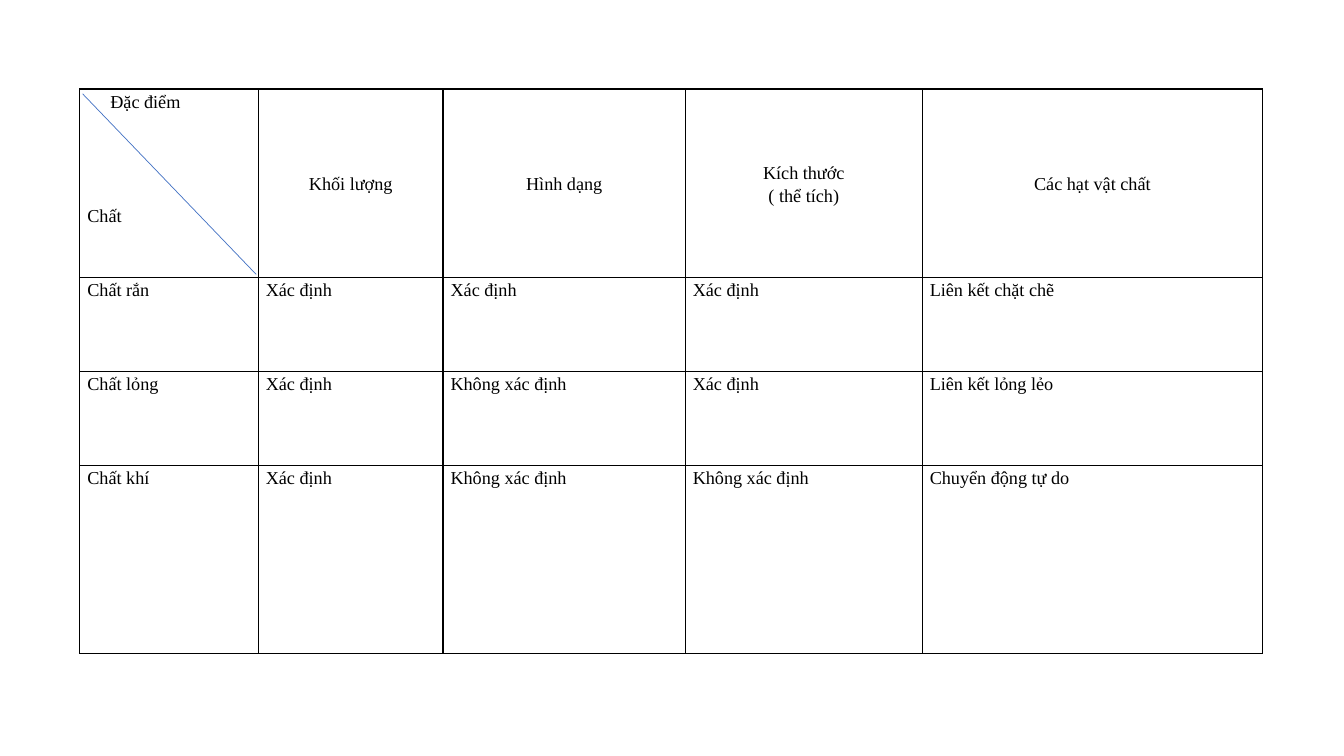
from lxml.etree import SubElement
from pptx import Presentation
from pptx.dml.color import RGBColor
from pptx.enum.shapes import MSO_CONNECTOR
from pptx.enum.text import MSO_ANCHOR, PP_ALIGN
from pptx.oxml.ns import qn
from pptx.util import Pt

COLORS = {"ink": "000000", "diagonal": "4472C4"}
COLUMN_WIDTHS = [127.5, 132, 173, 169.3, 243]
ROW_HEIGHTS = [134.4, 67.2, 67.2, 134.4]
ROWS = [
    ["Đặc điểm\nChất", "Khối lượng", "Hình dạng", "Kích thước\n( thể tích)", "Các hạt vật chất"],
    ["Chất rắn", "Xác định", "Xác định", "Xác định", "Liên kết chặt chẽ"],
    ["Chất lỏng", "Xác định", "Không xác định", "Xác định", "Liên kết lỏng lẻo"],
    ["Chất khí", "Xác định", "Không xác định", "Không xác định", "Chuyển động tự do"],
]


def add_borders(cell):
    properties = cell._tc.get_or_add_tcPr()
    for position, side in enumerate(["lnL", "lnR", "lnT", "lnB"]):
        border = properties.makeelement(qn(f"a:{side}"), {"w": str(Pt(1))})
        fill = SubElement(border, qn("a:solidFill"))
        SubElement(fill, qn("a:srgbClr"), val=COLORS["ink"])
        properties.insert(position, border)


presentation = Presentation()
presentation.slide_width = Pt(960)
presentation.slide_height = Pt(540)
slide = presentation.slides.add_slide(presentation.slide_layouts[6])

table = slide.shapes.add_table(
    len(ROWS), len(COLUMN_WIDTHS), Pt(57), Pt(63.6), Pt(sum(COLUMN_WIDTHS)), Pt(sum(ROW_HEIGHTS))
).table
table.first_row = False
table.horz_banding = False
for column, width in zip(table.columns, COLUMN_WIDTHS):
    column.width = Pt(width)
for row, height in zip(table.rows, ROW_HEIGHTS):
    row.height = Pt(height)

for row_index, texts in enumerate(ROWS):
    for column_index, text in enumerate(texts):
        cell = table.cell(row_index, column_index)
        is_heading = row_index == 0 and column_index > 0
        cell.margin_left = cell.margin_right = Pt(5.4)
        cell.margin_top = cell.margin_bottom = 0
        cell.vertical_anchor = MSO_ANCHOR.MIDDLE if is_heading else MSO_ANCHOR.TOP
        cell.fill.background()
        add_borders(cell)
        cell.text = text
        for paragraph in cell.text_frame.paragraphs:
            paragraph.alignment = PP_ALIGN.CENTER if is_heading else PP_ALIGN.JUSTIFY
            paragraph.line_spacing = 1.15
            paragraph.font.name = "Times New Roman"
            paragraph.font.size = Pt(13)
            paragraph.font.color.rgb = RGBColor.from_string(COLORS["ink"])

feature_label, substance_label = table.cell(0, 0).text_frame.paragraphs
feature_label._p.get_or_add_pPr().set("indent", str(Pt(16.4)))
substance_label.space_before = Pt(65)

diagonal = slide.shapes.add_connector(MSO_CONNECTOR.STRAIGHT, Pt(59), Pt(67), Pt(183), Pt(196))
diagonal.line.color.rgb = RGBColor.from_string(COLORS["diagonal"])
diagonal.line.width = Pt(0.5)
SubElement(diagonal._element.spPr, qn("a:effectLst"))

presentation.save("out.pptx")
